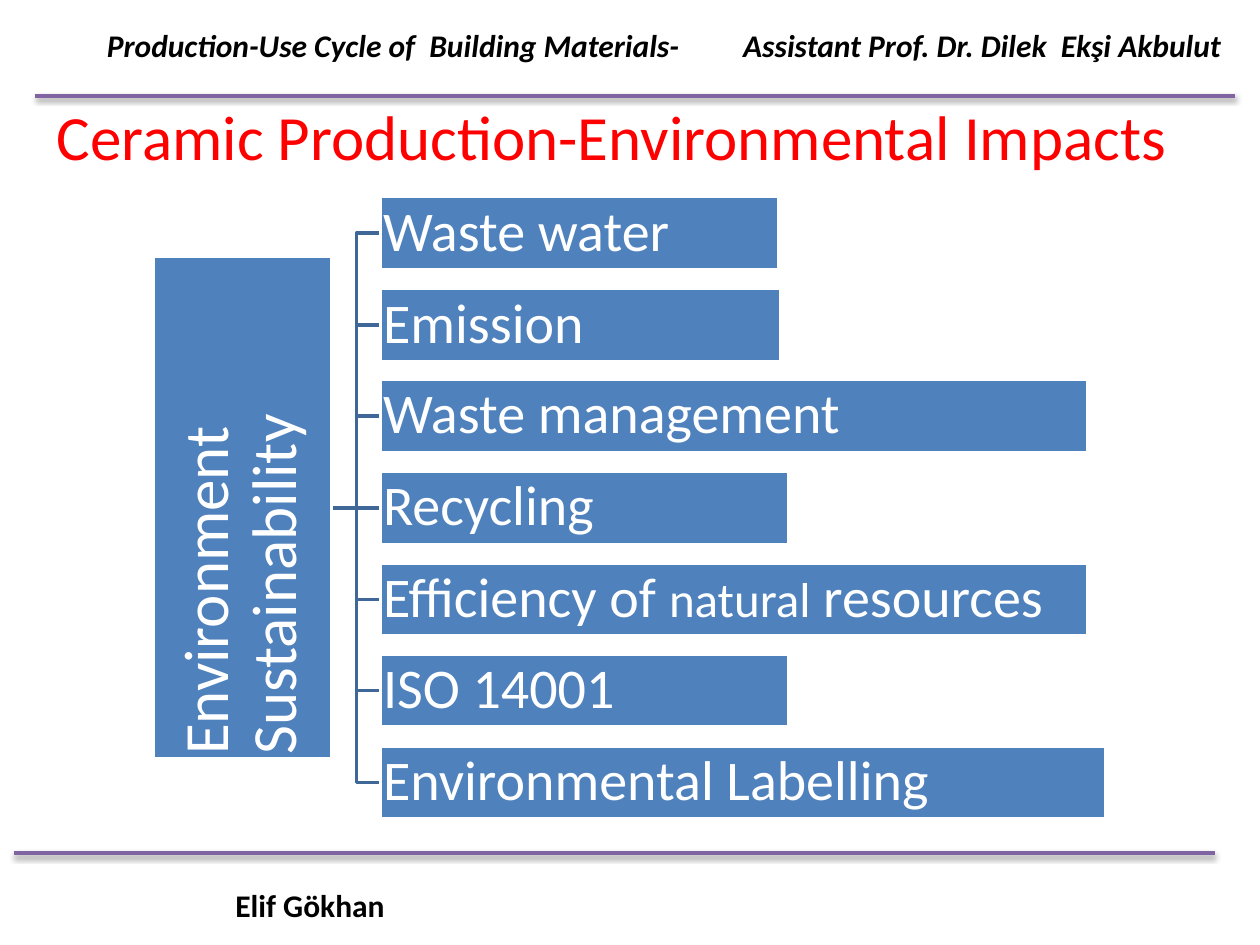
from lxml.etree import SubElement
from pptx import Presentation
from pptx.dml.color import RGBColor
from pptx.enum.shapes import MSO_CONNECTOR, MSO_SHAPE
from pptx.enum.text import MSO_ANCHOR, PP_ALIGN
from pptx.oxml.ns import qn
from pptx.util import Pt

PX = 9144
FONT = "Calibri"
COLORS = {
    "black": "000000",
    "white": "FFFFFF",
    "title": "FF0000",
    "rule": "8064A2",
    "box": "4F81BD",
    "branch": "3F6797",
}


def px(*lengths):
    return [length * PX for length in lengths]


def color(name):
    return RGBColor.from_string(COLORS[name])


def write(frame, runs, fill="black", bold=False, italic=False, spacing=None,
          inset=None, anchor=MSO_ANCHOR.TOP, wrap=True, tab=None):
    frame.word_wrap = wrap
    frame.vertical_anchor = anchor
    if inset is not None:
        frame.margin_left = frame.margin_right = inset * PX
        frame.margin_top = frame.margin_bottom = inset * PX
    paragraph = frame.paragraphs[0]
    paragraph.alignment = PP_ALIGN.LEFT
    if spacing:
        paragraph.line_spacing = spacing
    if tab:
        tabs = SubElement(paragraph._p.get_or_add_pPr(), qn("a:tabLst"))
        SubElement(tabs, qn("a:tab"), pos=str(tab * PX), algn="l")
    for text, size in runs:
        run = paragraph.add_run()
        run.text = text
        run.font.name = FONT
        run.font.size = Pt(size)
        run.font.bold = bold
        run.font.italic = italic
        run.font.color.rgb = color(fill)


class SlideBuilder:
    def __init__(self, presentation):
        self.slide = presentation.slides.add_slide(presentation.slide_layouts[5])
        self.shapes = self.slide.shapes

    def title(self, text, left, top, width, height):
        title = self.shapes.title
        title.left, title.top, title.width, title.height = px(left, top, width, height)
        write(title.text_frame, [(text, 36)], fill="title", anchor=MSO_ANCHOR.MIDDLE)

    def text(self, runs, left, top, width, height, **style):
        box = self.shapes.add_textbox(*px(left, top, width, height))
        write(box.text_frame, runs, **style)

    def line(self, start, end, line_color, shadow=False):
        connector = self.shapes.add_connector(MSO_CONNECTOR.STRAIGHT, *px(*start, *end))
        connector.line.color.rgb = color(line_color)
        connector.line.width = Pt(2)
        effects = SubElement(connector._element.spPr, qn("a:effectLst"))
        if shadow:
            outer = SubElement(effects, qn("a:outerShdw"), blurRad="40000", dist="20000",
                               dir="5400000", rotWithShape="0")
            shade = SubElement(outer, qn("a:srgbClr"), val=COLORS["black"])
            SubElement(shade, qn("a:alpha"), val="38000")

    def elbow(self, start, end, middle):
        builder = self.shapes.build_freeform(*px(*start))
        corners = [(middle, start[1]), (middle, end[1]), end]
        builder.add_line_segments([px(*point) for point in corners], close=False)
        shape = builder.convert_to_shape()
        shape.fill.background()
        shape.line.color.rgb = color("branch")
        shape.line.width = Pt(2)
        shape.shadow.inherit = False

    def box(self, runs, left, top, width, height, inset=2, rotation=0):
        shape = self.shapes.add_shape(MSO_SHAPE.RECTANGLE, *px(left, top, width, height))
        shape.rotation = rotation
        shape.fill.solid()
        shape.fill.fore_color.rgb = color("box")
        shape.line.color.rgb = color("white")
        shape.line.width = Pt(2)
        shape.shadow.inherit = False
        write(shape.text_frame, runs, fill="white", spacing=0.9, inset=inset,
              anchor=MSO_ANCHOR.MIDDLE)


def main():
    presentation = Presentation()
    presentation.slide_width, presentation.slide_height = px(1000, 750)
    slide = SlideBuilder(presentation)

    slide.line((28, 76), (980, 76), "rule", shadow=True)
    header = "Production-Use Cycle of  Building Materials-\tAssistant Prof. Dr. Dilek  Ekşi Akbulut"
    slide.text([(header, 18)], 75, 16, 917, 40, bold=True, italic=True, tab=505)
    slide.line((11, 677), (964, 677), "rule", shadow=True)
    slide.text([("Elif Gökhan", 18)], 177, 698, 140, 40, bold=True, wrap=False)
    slide.title("Ceramic Production-Environmental Impacts", 35, 45, 932, 125)

    impacts = [
        ([("Waste water", 32)], 316),
        ([("Emission", 32)], 318),
        ([("Waste management", 32)], 561),
        ([("Recycling", 32)], 324),
        ([("Efficiency of ", 32), ("natural", 28), (" resources", 32)], 561),
        ([("ISO 14001", 32)], 324),
        ([("Environmental Labelling", 32)], 576),
    ]
    first_top, last_top, box_height = 156, 592, 58
    step = (last_top - first_top) / (len(impacts) - 1)
    tops = [round(first_top + index * step) for index in range(len(impacts))]
    root_right, branch_x, box_left, root_y = 263, 283, 302, 403

    for top in tops:
        start, end = (root_right, root_y), (box_left, top + box_height // 2)
        if end[1] == root_y:
            slide.line(start, end, "branch")
        else:
            slide.elbow(start, end, branch_x)

    slide.box([("Environment Sustainability", 36)], -7, 332, 399, 141, inset=3, rotation=270)
    for top, (runs, width) in zip(tops, impacts):
        slide.box(runs, box_left, top, width, box_height)

    presentation.save("out.pptx")


if __name__ == "__main__":
    main()
